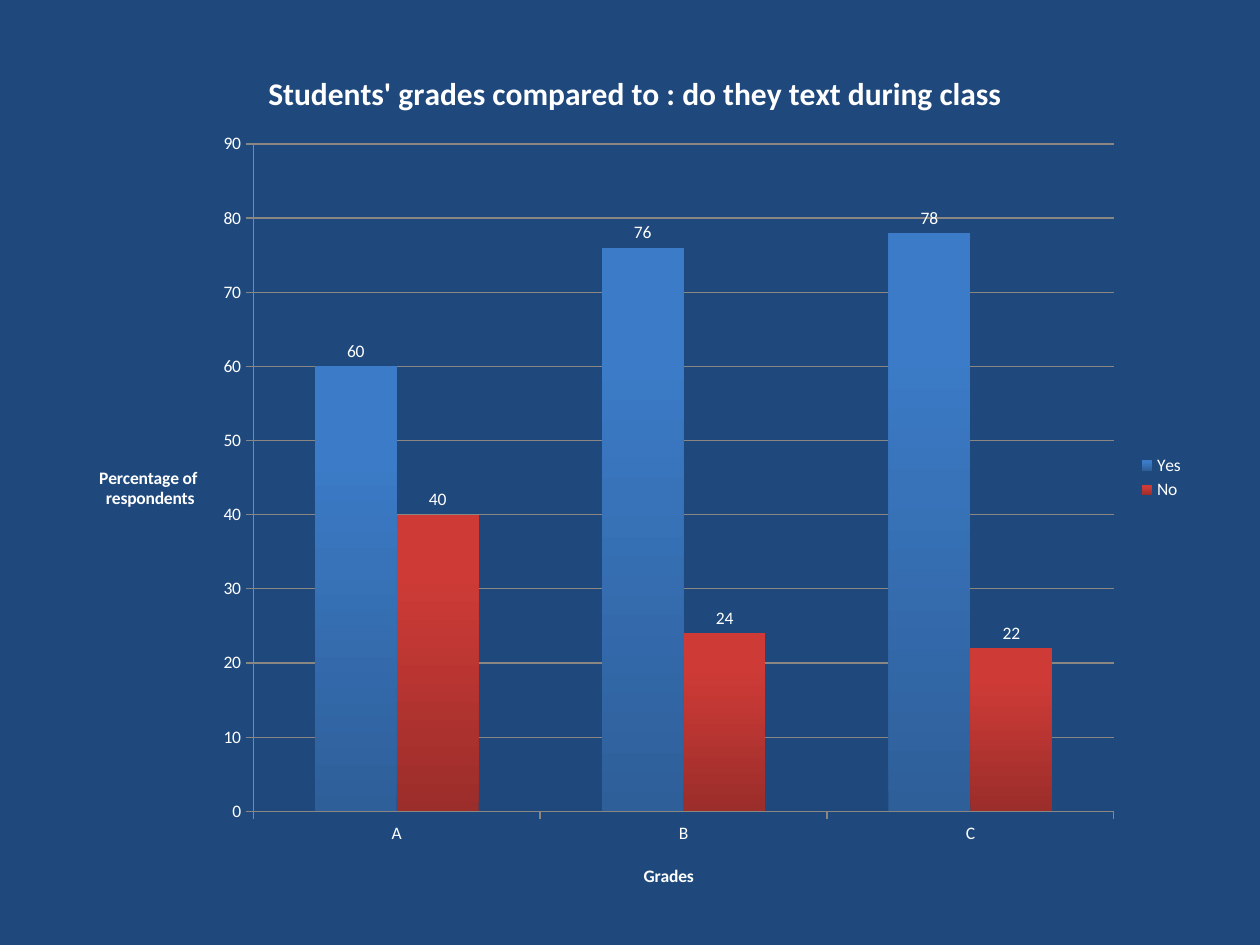
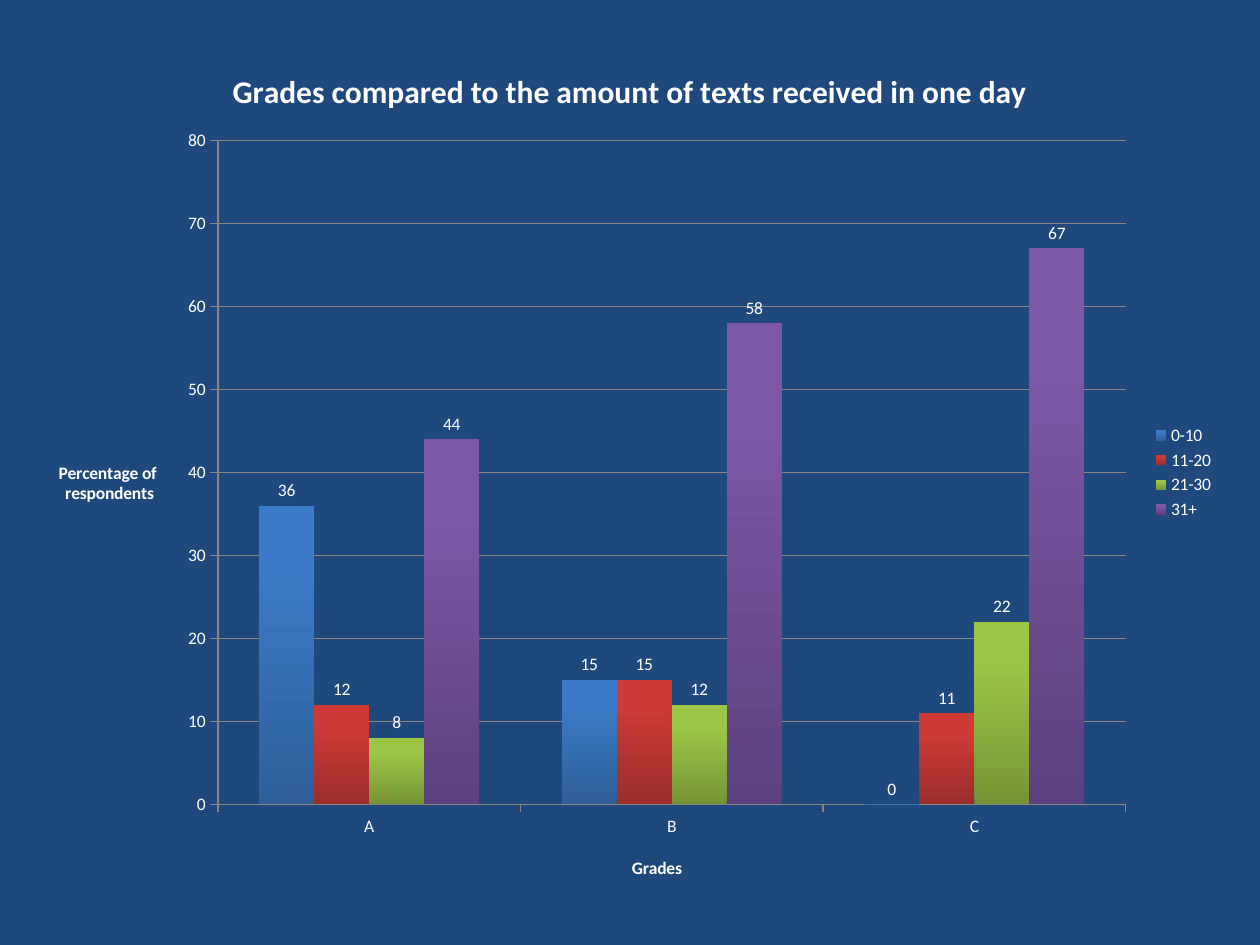
from lxml import etree
from pptx import Presentation
from pptx.chart.data import CategoryChartData
from pptx.dml.color import RGBColor
from pptx.enum import chart as ec
from pptx.oxml import ns
from pptx.util import Pt

# Shared look
FONT = "Calibri"
NAVY = RGBColor(0x1F, 0x49, 0x7D)
WHITE = RGBColor(0xFF, 0xFF, 0xFF)
GREY = RGBColor(0x8A, 0x87, 0x82)
# Bottom and top colour of each series
BLUE = RGBColor(0x2E, 0x5F, 0x99), RGBColor(0x3C, 0x7B, 0xC7)
RED = RGBColor(0x9B, 0x2D, 0x2A), RGBColor(0xCE, 0x3B, 0x37)
GREEN = RGBColor(0x76, 0x95, 0x35), RGBColor(0x9C, 0xC7, 0x46)
PURPLE = RGBColor(0x5D, 0x41, 0x7E), RGBColor(0x7E, 0x57, 0xA5)
SERIES_COLOURS = [BLUE, RED, GREEN, PURPLE]
GRADES = ["A", "B", "C"]


def add_slide(prs):
    s = prs.slides.add_slide(prs.slide_layouts[6])
    s.background.fill.solid()
    s.background.fill.fore_color.rgb = NAVY
    return s


def set_title(owner, words, size):
    """Write a bold title, one paragraph a line, on a chart or an axis."""
    tf = owner.text_frame
    tf.text = words
    for p in tf.paragraphs:
        p.font.size = Pt(size)
        p.font.bold = True
        p.font.name = FONT
        p.font.color.rgb = WHITE
    return tf


def style_axis(axis, title):
    axis.major_tick_mark = ec.XL_TICK_MARK.OUTSIDE
    axis.minor_tick_mark = ec.XL_TICK_MARK.NONE
    axis.format.line.color.rgb = GREY
    axis.format.line.width = Pt(0.75)
    tf = set_title(axis.axis_title, title, 10)
    body = tf._txBody.find(ns.qn("a:bodyPr"))
    body.set("rot", "0")
    body.set("vert", "horz")


def style_series(series, colours):
    fill = series.format.fill
    fill.gradient()
    fill.gradient_angle = 90
    for stop, colour, position in zip(fill.gradient_stops, colours, (0, 0.8)):
        stop.color.rgb = colour
        stop.position = position
    labels = series.data_labels
    labels.show_value = True
    labels.position = ec.XL_LABEL_POSITION.OUTSIDE_END


def place_plot(chart, **fractions):
    """Fix the inner plot area as fractions of the chart."""
    area = chart._chartSpace.chart.plotArea
    for old in area.findall(ns.qn("c:layout")):
        area.remove(old)
    layout = etree.Element(ns.qn("c:layout"))
    manual = etree.SubElement(layout, ns.qn("c:manualLayout"))
    settings = {"layoutTarget": "inner", "xMode": "edge", "yMode": "edge", **fractions}
    for name, value in settings.items():
        etree.SubElement(manual, ns.qn("c:" + name)).set("val", str(value))
    area.insert(0, layout)


def add_grade_chart(s, box, title, value_title, top, answers, plot_x, plot_w):
    data = CategoryChartData()
    data.categories = GRADES
    for name, values in answers.items():
        data.add_series(name, values)
    frame = s.shapes.add_chart(ec.XL_CHART_TYPE.COLUMN_CLUSTERED,
                               *[Pt(v) for v in box], data)
    chart = frame.chart
    chart.font.name = FONT
    chart.font.size = Pt(10)
    chart.font.color.rgb = WHITE
    set_title(chart.chart_title, title, 18)

    # Axes and grid
    style_axis(chart.category_axis, "Grades")
    axis = chart.value_axis
    style_axis(axis, value_title)
    axis.minimum_scale, axis.maximum_scale, axis.major_unit = 0, top, 10
    axis.major_gridlines.format.line.color.rgb = GREY
    axis.major_gridlines.format.line.width = Pt(0.75)

    # Columns
    plot = chart.plots[0]
    plot.gap_width, plot.overlap, plot.vary_by_categories = 150, 0, False
    for series, colours in zip(plot.series, SERIES_COLOURS):
        style_series(series, colours)

    # Legend and plot area
    chart.has_legend = True
    chart.legend.position = ec.XL_LEGEND_POSITION.RIGHT
    chart.legend.include_in_layout = False
    place_plot(chart, x=plot_x, y=0.117, w=plot_w, h=0.766)


def main():
    prs = Presentation()
    prs.slide_width, prs.slide_height = Pt(720), Pt(540)

    # Texting during class
    add_grade_chart(
        add_slide(prs), (42, 24, 642, 498),
        "Students' grades compared to : do they text during class",
        "Percentage of\n respondents", 90,
        {"Yes": (60, 76, 78), "No": (40, 24, 22)}, 0.16, 0.766)

    # Texts received in one day
    add_grade_chart(
        add_slide(prs), (18.75, 22.5, 682.5, 495),
        "Grades compared to the amount of texts received in one day",
        "Percentage of \nrespondents", 80,
        {"0-10": (36, 15, 0), "11-20": (12, 15, 11),
         "21-30": (8, 12, 22), "31+": (44, 58, 67)}, 0.155, 0.76)

    prs.save("out.pptx")


if __name__ == "__main__":
    main()
